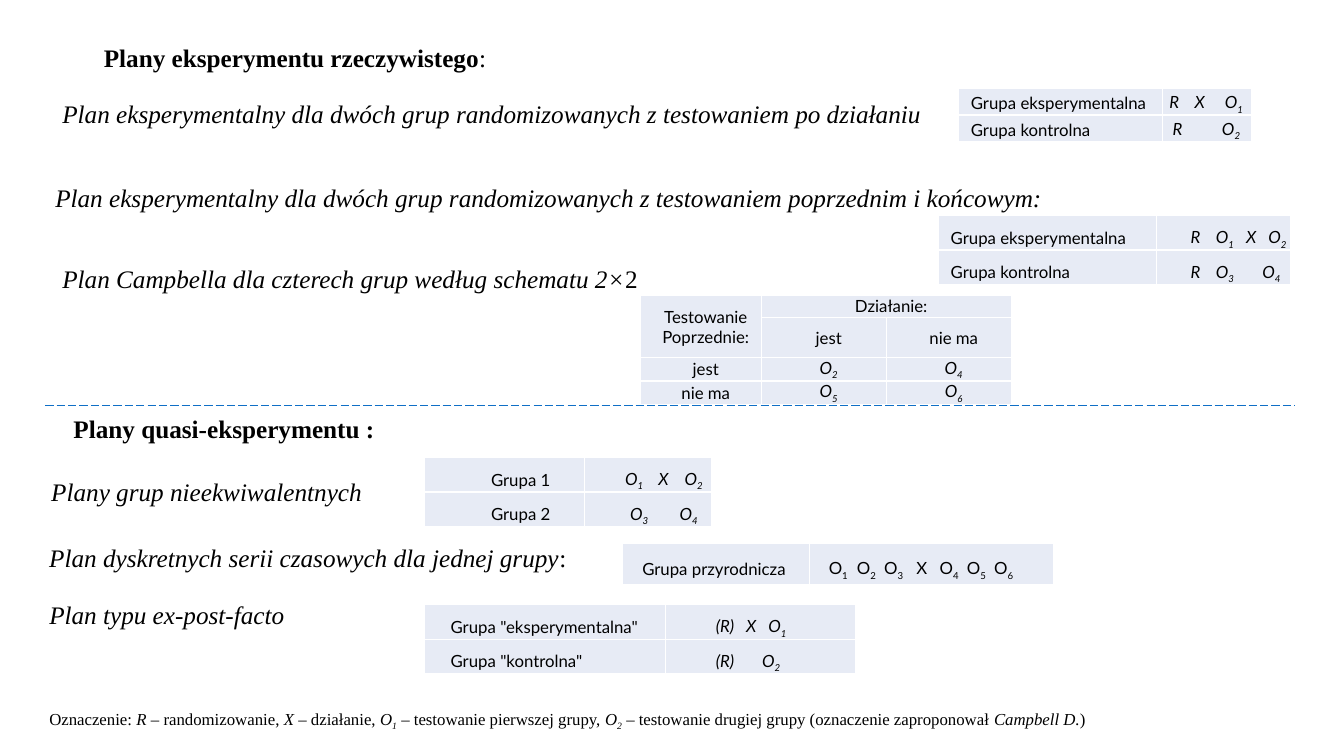
from itertools import groupby

from lxml import etree
from pptx import Presentation
from pptx.dml.color import RGBColor
from pptx.enum.dml import MSO_LINE
from pptx.enum.shapes import MSO_CONNECTOR
from pptx.enum.text import MSO_ANCHOR, MSO_AUTO_SIZE, PP_ALIGN
from pptx.oxml.ns import qn
from pptx.util import Inches, Pt

LEFT, CENTER, JUSTIFY = PP_ALIGN.LEFT, PP_ALIGN.CENTER, PP_ALIGN.JUSTIFY
TOP, MIDDLE, BOTTOM = MSO_ANCHOR.TOP, MSO_ANCHOR.MIDDLE, MSO_ANCHOR.BOTTOM
NO_FIT = MSO_AUTO_SIZE.NONE
LONG_DASH = MSO_LINE.LONG_DASH
STRAIGHT = MSO_CONNECTOR.STRAIGHT


def color(hex_text):
    return RGBColor.from_string(hex_text)


def symbols(text, style="i"):
    """Split a design formula into letters and subscript digits."""
    return [("".join(part), style + "s" if is_digit else style)
            for is_digit, part in groupby(text, str.isdigit)]


def label(text, left=0.12, align=LEFT):
    return {"lines": [[(text, "")]], "left": left, "align": align}


def formula(text, left, tabs=(), style="i", align=LEFT, anchor=MIDDLE):
    return {"lines": [symbols(text, style)], "left": left, "tabs": tabs,
            "align": align, "anchor": anchor}


class DesignPage:
    SERIF, SANS = "Times New Roman", "Lato"
    INK, CELL, GRID, RULE = "000000", "E7EBF5", "FFFFFF", "0F6FC6"

    def __init__(self, deck):
        self.page = deck.slides.add_slide(deck.slide_layouts[5])

    def add_spans(self, para, spans, font, size, spacing=1.0, align=LEFT, tabs=()):
        """Style letters: b bold, i italic, s subscript."""
        para.alignment = align
        para.line_spacing = spacing
        para.space_before = Pt(0)
        if tabs:
            stops = etree.SubElement(para._p.get_or_add_pPr(), qn("a:tabLst"))
            for position in tabs:
                etree.SubElement(stops, qn("a:tab"),
                                 pos=str(Inches(position)), algn="l")
        for text, style in spans:
            span = para.add_run()
            span.text = text
            span.font.name = font
            span.font.size = Pt(size)
            span.font.color.rgb = color(self.INK)
            span.font.bold = "b" in style
            span.font.italic = "i" in style
            if "s" in style:
                span.font._element.set("baseline", "-25000")

    def title(self, spans, left, top, width, height, indent):
        box = self.page.shapes.title
        box.left, box.top = Inches(left), Inches(top)
        box.width, box.height = Inches(width), Inches(height)
        frame = box.text_frame
        frame.auto_size = NO_FIT
        frame.vertical_anchor = TOP
        para = frame.paragraphs[0]
        self.add_spans(para, spans, self.SERIF, 18, 1.5, JUSTIFY)
        para._p.get_or_add_pPr().set("indent", str(Inches(indent)))

    def text(self, spans, left, top, width, height=0.4, size=18, spacing=1.0):
        box = self.page.shapes.add_textbox(
            Inches(left), Inches(top), Inches(width), Inches(height))
        box.text_frame.word_wrap = True
        self.add_spans(box.text_frame.paragraphs[0], spans, self.SERIF, size,
                       spacing)

    def border(self, cell):
        properties = cell._tc.get_or_add_tcPr()
        for side in ("lnL", "lnR", "lnT", "lnB"):
            edge = etree.SubElement(properties, qn("a:" + side), w=str(Pt(1)))
            fill = etree.SubElement(edge, qn("a:solidFill"))
            etree.SubElement(fill, qn("a:srgbClr"), val=self.GRID)

    def table(self, left, top, widths, heights, rows, spacing=1.5, merges=()):
        grid = self.page.shapes.add_table(
            len(heights), len(widths), Inches(left), Inches(top),
            Inches(sum(widths)), Inches(sum(heights))).table
        grid.first_row = grid.horz_banding = False
        for column, width in zip(grid.columns, widths):
            column.width = Inches(width)
        for line, height in zip(grid.rows, heights):
            line.height = Inches(height)
        for start, end in merges:
            grid.cell(*start).merge(grid.cell(*end))
        for r, row in enumerate(rows):
            for c, content in enumerate(row):
                cell = grid.cell(r, c)
                self.border(cell)
                cell.fill.solid()
                cell.fill.fore_color.rgb = color(self.CELL)
                cell.margin_top = cell.margin_bottom = cell.margin_right = 0
                if content:
                    self.fill_cell(cell, content, spacing)

    def fill_cell(self, cell, content, spacing):
        cell.margin_left = Inches(content["left"])
        if content["align"] == CENTER:
            cell.margin_right = Inches(0.03)
        cell.vertical_anchor = content.get("anchor", MIDDLE)
        frame = cell.text_frame
        for number, spans in enumerate(content["lines"]):
            para = frame.add_paragraph() if number else frame.paragraphs[0]
            self.add_spans(para, spans, self.SANS, 12, spacing,
                           content["align"], content.get("tabs", ()))

    def divider(self, left, right, top):
        line = self.page.shapes.add_connector(
            STRAIGHT, Inches(left), Inches(top), Inches(right), Inches(top))
        line.line.color.rgb = color(self.RULE)
        line.line.width = Pt(0.75)
        line.line.dash_style = LONG_DASH
        etree.SubElement(line._element.spPr, qn("a:effectLst"))


def main():
    deck = Presentation()
    deck.slide_width, deck.slide_height = Inches(13.33), Inches(7.5)
    designs = DesignPage(deck)

    # True experiments
    designs.title([("Plany eksperymentu rzeczywistego", "b"), (":", "")],
                  0.63, 0.22, 6.67, 0.5, indent=0.3)
    designs.text([("Plan eksperymentalny dla dwóch grup randomizowanych "
                   "z testowaniem po działaniu", "i")], 0.52, 0.93, 8.82)
    designs.table(9.51, 0.88, [2.02, 0.88], [0.26] * 2, [
        [label("Grupa eksperymentalna"),
         formula("R\tХ\tО1", 0.07, (0.25, 0.55), anchor=BOTTOM)],
        [label("Grupa kontrolna"),
         formula("R\tО2", 0.1, (0.49,), anchor=BOTTOM)],
    ], spacing=1.15)

    designs.text([("Plan eksperymentalny dla dwóch grup randomizowanych "
                   "z testowaniem poprzednim i końcowym:", "i")],
                 0.45, 1.61, 10.72, 0.5, spacing=1.5)
    designs.table(9.31, 2.14, [2.16, 1.33], [0.34] * 2, [
        [label("Grupa eksperymentalna"),
         formula("R\tО1\tХ\tО2", 0.34, (0.25, 0.55, 0.77))],
        [label("Grupa kontrolna"),
         formula("R\tО3\tО4", 0.34, (0.25, 0.71))],
    ])

    # Four-group design
    designs.text([("Plan Campbella dla czterech grup według schematu 2×", "i"),
                  ("2", "")], 0.52, 2.56, 6.67)
    corner = {"lines": [[("Testowanie", "")], [("Poprzednie:", "")]],
              "left": 0.13, "align": CENTER}
    heading, present, absent = (label(text, 0.13, CENTER)
                                for text in ("Działanie:", "jest", "nie ma"))
    o2, o4, o5, o6 = (formula(f"О{number}", 0.13, align=CENTER)
                      for number in (2, 4, 5, 6))
    designs.table(6.35, 2.93, [1.2, 1.24, 1.24], [0.22, 0.39, 0.23, 0.23], [
        [corner, heading, None],
        [None, present, absent],
        [present, o2, o4],
        [absent, o5, o6],
    ], spacing=1.0, merges=[((0, 0), (1, 0)), ((0, 1), (0, 2))])

    designs.divider(0.45, 12.84, 4.02)

    # Quasi-experiments
    designs.text([("Plany quasi-eksperymentu :", "b")], 0.63, 4.05, 4.75)
    designs.text([("Plany grup nieekwiwalentnych", "i")], 0.41, 4.68, 3.62)
    designs.table(4.21, 4.54, [1.59, 1.26], [0.34] * 2, [
        [label("Grupa 1", 0.35, CENTER),
         formula("О1\tХ\tО2", 0.4, (0.33, 0.59))],
        [label("Grupa 2", 0.35, CENTER),
         formula("О3\tО4", 0.45, (0.49,))],
    ])

    designs.text([("Plan dyskretnych serii czasowych dla jednej grupy", "i"),
                  (":", "")], 0.39, 5.18, 5.54, 0.5, spacing=1.5)
    designs.table(6.17, 5.39, [1.86, 2.42], [0.41], [
        [label("Grupa przyrodnicza", 0.2),
         formula("О1\tО2\tО3\tХ\tО4\tО5\tО6", 0.19,
                 (0.28, 0.55, 0.87, 1.1, 1.37, 1.64), style="")],
    ])

    designs.text([("Plan typu eх-post-facto", "i")], 0.39, 5.9, 3.51)
    designs.table(4.21, 6, [2.39, 1.89], [0.34] * 2, [
        [label('Grupa "eksperymentalna"', 0.26, JUSTIFY),
         formula("(R)\tХ\tО1", 0.5, (0.3, 0.52))],
        [label('Grupa "kontrolna"', 0.26, JUSTIFY),
         formula("(R)\tО2", 0.5, (0.46,))],
    ])

    # Key to the symbols
    designs.text([
        ("Oznaczenie: ", ""), ("R", "i"), (" – randomizowanie, ", ""),
        ("Х", "i"), (" – działanie, ", ""),
        *symbols("О1"), (" – testowanie pierwszej grupy, ", ""),
        *symbols("О2"),
        (" – testowanie drugiej grupy (oznaczenie zaproponował ", ""),
        ("Campbell D.", "i"), (")", ""),
    ], 0.39, 6.98, 12.15, 0.3, size=12)

    deck.save("out.pptx")


if __name__ == "__main__":
    main()
